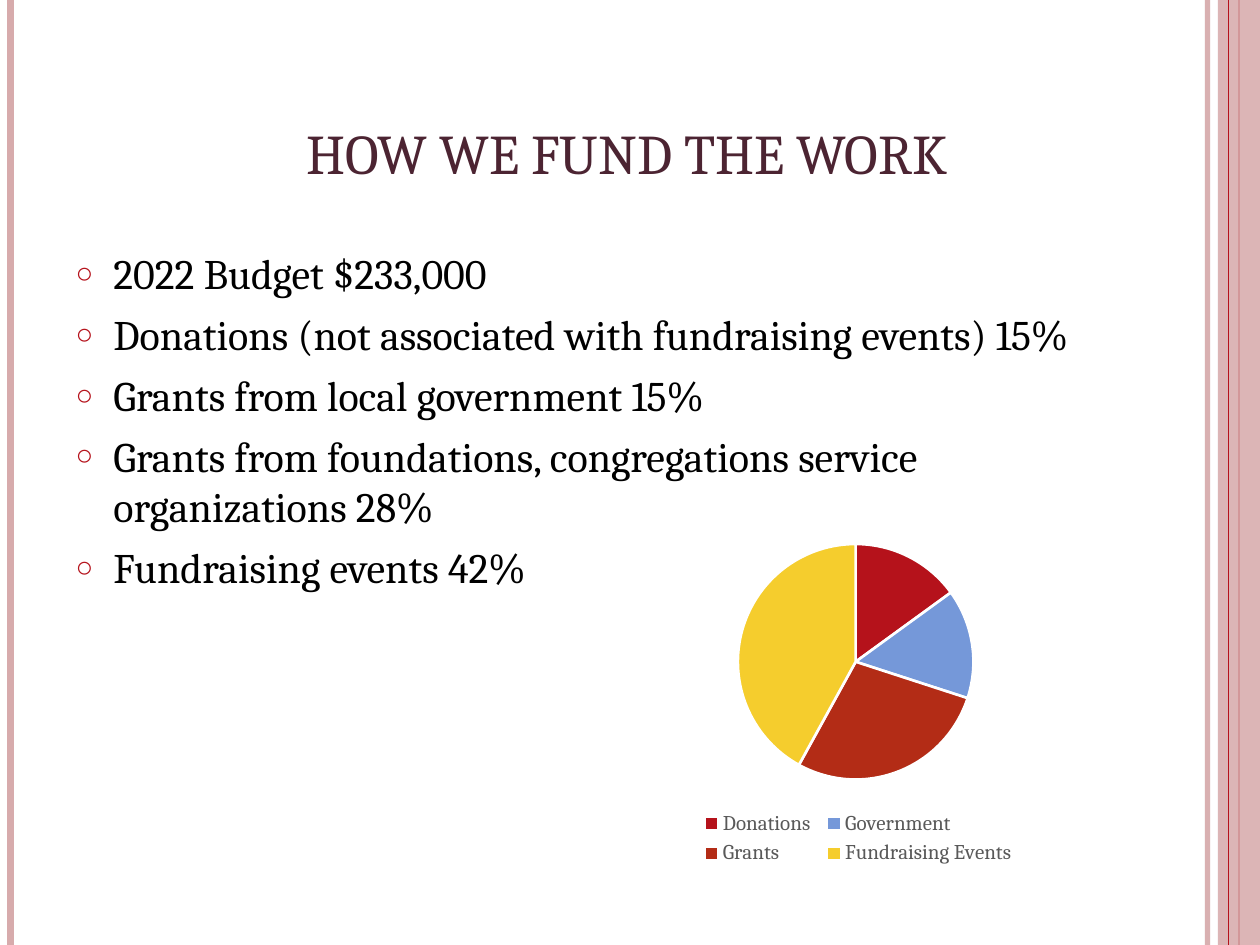
import dataclasses

import lxml.etree
import pptx
import pptx.chart.data
import pptx.dml.color
import pptx.enum.chart
import pptx.enum.shapes
import pptx.enum.text
import pptx.oxml
import pptx.oxml.ns
import pptx.util

Pt = pptx.util.Pt
qn = pptx.oxml.ns.qn


@dataclasses.dataclass(frozen=True)
class Theme:
    font: str = "Cambria"
    title: str = "4C2432"
    text: str = "000000"
    legend: str = "595959"
    accent: str = "B5121B"
    rose: str = "D7ABAC"
    white: str = "FFFFFF"
    slices: tuple = ("B5121B", "7598D9", "B32C16", "F5CD2D")
    title_size: int = 40
    body_size: int = 24
    legend_size: int = 12
    chart_size: int = 10


class SlideBuilder:
    def __init__(self, prs, theme):
        self.theme = theme
        self.s = prs.slides.add_slide(prs.slide_layouts[1])
        self.height = prs.slide_height.pt

    def rgb(self, color):
        return pptx.dml.color.RGBColor.from_string(color)

    def style(self, font, size, color):
        font.name = self.theme.font
        font.size = Pt(size)
        font.color.rgb = self.rgb(color)

    def child(self, parent, tag, **attrs):
        return lxml.etree.SubElement(parent, qn(tag), attrs)

    def set_alpha(self, sp, percent):
        for clr in sp._element.spPr.iter(qn("a:srgbClr")):
            self.child(clr, "a:alpha", val=str(percent * 1000))

    def place(self, sp, left, top, width, height):
        sp.left, sp.top, sp.width, sp.height = map(Pt, (left, top, width, height))

    def rule(self, x, color, width, alpha=100):
        line = self.s.shapes.add_connector(
            pptx.enum.shapes.MSO_CONNECTOR.STRAIGHT, Pt(x), 0, Pt(x), Pt(self.height))
        line.line.color.rgb = self.rgb(color)
        line.line.width = Pt(width)
        if alpha < 100:
            self.set_alpha(line, alpha)
        self.child(line._element.spPr, "a:effectLst")

    def band(self, x, width, color, alpha):
        sp = self.s.shapes.add_shape(
            pptx.enum.shapes.MSO_SHAPE.RECTANGLE, Pt(x), 0, Pt(width), Pt(self.height))
        sp.shadow.inherit = False
        sp.fill.solid()
        sp.fill.fore_color.rgb = self.rgb(color)
        sp.line.fill.background()
        self.set_alpha(sp, alpha)

    def title(self, text, *box):
        sp = self.s.shapes.title
        self.place(sp, *box)
        tf = sp.text_frame
        tf.text = text
        tf.vertical_anchor = pptx.enum.text.MSO_ANCHOR.BOTTOM
        p = tf.paragraphs[0]
        p.alignment = pptx.enum.text.PP_ALIGN.LEFT
        r = p.runs[0]
        self.style(r.font, self.theme.title_size, self.theme.title)
        r.font._element.set("cap", "small")

    def bullets(self, items, *box):
        sp = self.s.placeholders[1]
        self.place(sp, *box)
        tf = sp.text_frame
        tf.text = "\n".join(items)
        indent = Pt(21.6)
        for i, p in enumerate(tf.paragraphs):
            p.space_before = Pt(6 if i else 0)
            pPr = p._p.get_or_add_pPr()
            pPr.set("marL", str(indent))
            pPr.set("indent", str(-indent))
            clr = self.child(pPr, "a:buClr")
            self.child(clr, "a:srgbClr", val=self.theme.accent)
            self.child(pPr, "a:buSzPct", val="70000")
            self.child(pPr, "a:buChar", char="○")
            self.style(p.runs[0].font, self.theme.body_size, self.theme.text)

    def layout(self, x, y, w, h, inner=False):
        layout = pptx.oxml.parse_xml(
            '<c:layout xmlns:c="http://schemas.openxmlformats.org/drawingml/2006/chart"/>')
        manual = self.child(layout, "c:manualLayout")
        if inner:
            self.child(manual, "c:layoutTarget", val="inner")
        for tag in ("c:xMode", "c:yMode"):
            self.child(manual, tag, val="edge")
        for tag, value in zip(("c:x", "c:y", "c:w", "c:h"), (x, y, w, h)):
            self.child(manual, tag, val=str(value))
        return layout

    def pie(self, categories, values, *box):
        data = pptx.chart.data.CategoryChartData()
        data.categories = categories
        data.add_series("Series 1", values)
        chart = self.s.shapes.add_chart(
            pptx.enum.chart.XL_CHART_TYPE.PIE, *map(Pt, box), data).chart
        chart.has_title = False
        self.style(chart.font, self.theme.chart_size, self.theme.text)

        # Slices
        plot = chart.plots[0]
        plot.vary_by_categories = True
        for i, color in enumerate(self.theme.slices):
            fmt = plot.series[0].points[i].format
            fmt.fill.solid()
            fmt.fill.fore_color.rgb = self.rgb(color)
            fmt.line.color.rgb = self.rgb(self.theme.white)
            fmt.line.width = Pt(1.5)

        # Legend in two rows below the pie
        chart.has_legend = True
        legend = chart.legend
        legend.position = pptx.enum.chart.XL_LEGEND_POSITION.BOTTOM
        legend.include_in_layout = False
        self.style(legend.font, self.theme.legend_size, self.theme.legend)
        for el in (legend._element, chart._chartSpace.chart.plotArea):
            for old in el.findall(qn("c:layout")):
                el.remove(old)
        legend._element.find(qn("c:legendPos")).addnext(
            self.layout(0.2, 0.81, 0.61, 0.19))
        chart._chartSpace.chart.plotArea.insert(
            0, self.layout(0.28, 0.05, 0.44, 0.69, inner=True))


def main():
    prs = pptx.Presentation()
    prs.slide_width, prs.slide_height = Pt(720), Pt(540)
    theme = Theme()
    b = SlideBuilder(prs, theme)

    # Side rules and right-hand band
    b.rule(690, theme.rose, 3, alpha=93)
    b.rule(6, theme.rose, 4.5)
    b.rule(708, theme.accent, 1.5)
    b.band(696, 24, theme.rose, alpha=87)
    b.rule(702, theme.accent, 0.75)

    # Title and funding list
    b.title("how we fund the work", 168, 21.6, 456, 90)
    b.bullets([
        "2022 Budget $233,000",
        "Donations (not associated with fundraising events) 15%",
        "Grants from local government 15%",
        "Grants from foundations, congregations service organizations 28%",
        "Fundraising events 42%",
    ], 36, 138, 588, 372)

    # Funding shares
    b.pie(["Donations", "Government", "Grants", "Fundraising Events"],
          [15, 15, 28, 42], 336, 300, 306, 198)

    prs.save("out.pptx")


if __name__ == "__main__":
    main()
